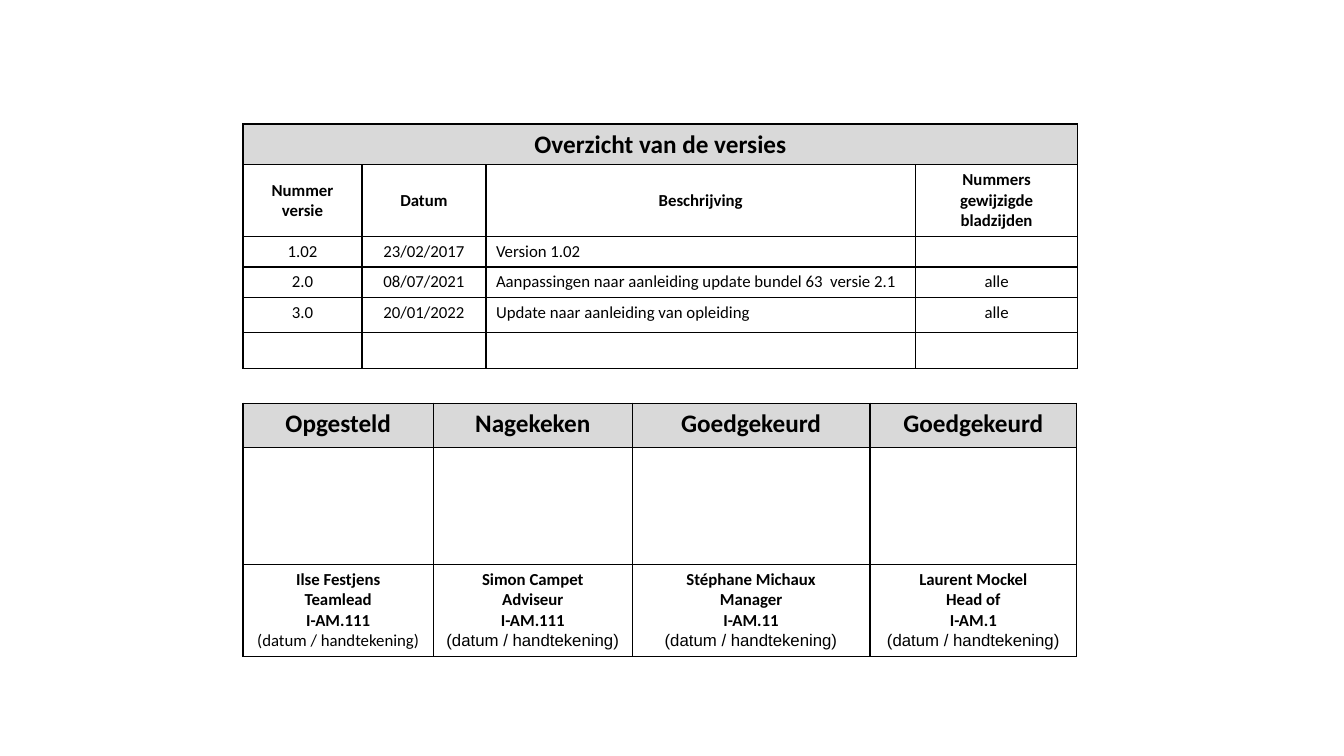
from dataclasses import dataclass

from lxml.etree import SubElement
from pptx import Presentation
from pptx.dml.color import RGBColor
from pptx.enum.text import MSO_ANCHOR as Anchor, PP_ALIGN as Align
from pptx.oxml.ns import qn
from pptx.util import Inches, Pt

VERSION_TITLE = "Overzicht van de versies"
VERSION_HEADERS = ["Nummer versie", "Datum", "Beschrijving", "Nummers gewijzigde bladzijden"]
VERSIONS = [
    ("1.02", "23/02/2017", "Version 1.02", ""),
    ("2.0", "08/07/2021", "Aanpassingen naar aanleiding update bundel 63  versie 2.1", "alle"),
    ("3.0", "20/01/2022", "Update naar aanleiding van opleiding", "alle"),
    ("", "", "", ""),
]
DESCRIPTION_COLUMN = 2

SIGN_HERE = "(datum / handtekening)"
APPROVALS = [
    ("Opgesteld", ["Ilse Festjens", "Teamlead", "I-AM.111"], "Calibri"),
    ("Nagekeken", ["Simon Campet", "Adviseur", "I-AM.111"], "Arial"),
    ("Goedgekeurd", ["Stéphane Michaux", "Manager", "I-AM.11"], "Arial"),
    ("Goedgekeurd", ["Laurent Mockel", "Head of", "I-AM.1"], "Arial"),
]

TABLE_LEFT = 2.41
VERSION_TOP, APPROVAL_TOP = 1.23, 4
VERSION_COLUMNS, VERSION_ROWS = [1.18, 1.23, 4.26, 1.61], [0.4, 0.7, 0.3, 0.3, 0.35, 0.35]
APPROVAL_COLUMNS, APPROVAL_ROWS = [1.89, 1.97, 2.36, 2.05], [0.44, 1.16, 0.91]


@dataclass(frozen=True)
class Theme:
    font: str = "Calibri"
    text: str = "000000"
    border: str = "000000"
    heading_fill: str = "D9D9D9"
    body_fill: str = "FFFFFF"
    heading_size: int = 18
    body_size: int = 12
    border_width: int = 1


THEME = Theme()


def set_borders(cell):
    properties = cell._tc.get_or_add_tcPr()
    for position, side in enumerate(("a:lnL", "a:lnR", "a:lnT", "a:lnB")):
        line = SubElement(properties, qn(side), w=str(Pt(THEME.border_width)))
        SubElement(SubElement(line, qn("a:solidFill")), qn("a:srgbClr"), val=THEME.border)
        properties.insert(position, line)  # borders precede the fill


def add_table(slide, top, columns, rows):
    """Add a white table with borders on every cell."""
    frame = slide.shapes.add_table(
        len(rows), len(columns), Inches(TABLE_LEFT), Inches(top),
        Inches(sum(columns)), Inches(sum(rows)))
    table = frame.table
    table.first_row = table.horz_banding = False
    for column, width in zip(table.columns, columns):
        column.width = Inches(width)
    for row, height in zip(table.rows, rows):
        row.height = Inches(height)
    for cell in table.iter_cells():
        fill_cell(cell, THEME.body_fill)
        set_borders(cell)
    return table


def fill_cell(cell, color):
    cell.fill.solid()
    cell.fill.fore_color.rgb = RGBColor.from_string(color)


def write_cell(cell, lines, align=Align.CENTER, size=THEME.body_size):
    """Write (text, bold, font) lines, one paragraph each."""
    for index, (text, bold, font) in enumerate(lines):
        frame = cell.text_frame
        paragraph = frame.add_paragraph() if index else frame.paragraphs[0]
        paragraph.alignment = align
        if not text:
            SubElement(paragraph._p, qn("a:endParaRPr"), sz=str(size * 100))
            continue
        run = paragraph.add_run()
        run.text = text
        run.font.name = font
        run.font.size = Pt(size)
        run.font.bold = bold
        run.font.color.rgb = RGBColor.from_string(THEME.text)


def write_heading(cell, text):
    fill_cell(cell, THEME.heading_fill)
    write_cell(cell, [(text, True, THEME.font)], size=THEME.heading_size)


def add_version_table(slide):
    table = add_table(slide, VERSION_TOP, VERSION_COLUMNS, VERSION_ROWS)
    table.cell(0, 0).merge(table.cell(0, len(VERSION_COLUMNS) - 1))
    write_heading(table.cell(0, 0), VERSION_TITLE)
    for column, header in enumerate(VERSION_HEADERS):
        cell = table.cell(1, column)
        cell.vertical_anchor = Anchor.MIDDLE
        write_cell(cell, [(header, True, THEME.font)])
    for row, version in enumerate(VERSIONS, start=2):
        for column, text in enumerate(version):
            align = Align.LEFT if column == DESCRIPTION_COLUMN else Align.CENTER
            write_cell(table.cell(row, column), [(text, False, THEME.font)], align)


def add_approval_table(slide):
    table = add_table(slide, APPROVAL_TOP, APPROVAL_COLUMNS, APPROVAL_ROWS)
    for column, (heading, person, sign_font) in enumerate(APPROVALS):
        write_heading(table.cell(0, column), heading)
        lines = [(text, True, THEME.font) for text in person]
        write_cell(table.cell(2, column), lines + [(SIGN_HERE, False, sign_font)])


def main():
    presentation = Presentation()
    presentation.slide_width, presentation.slide_height = Inches(13.33), Inches(7.5)
    slide = presentation.slides.add_slide(presentation.slide_layouts[6])
    add_approval_table(slide)
    add_version_table(slide)
    presentation.save("out.pptx")


if __name__ == "__main__":
    main()
